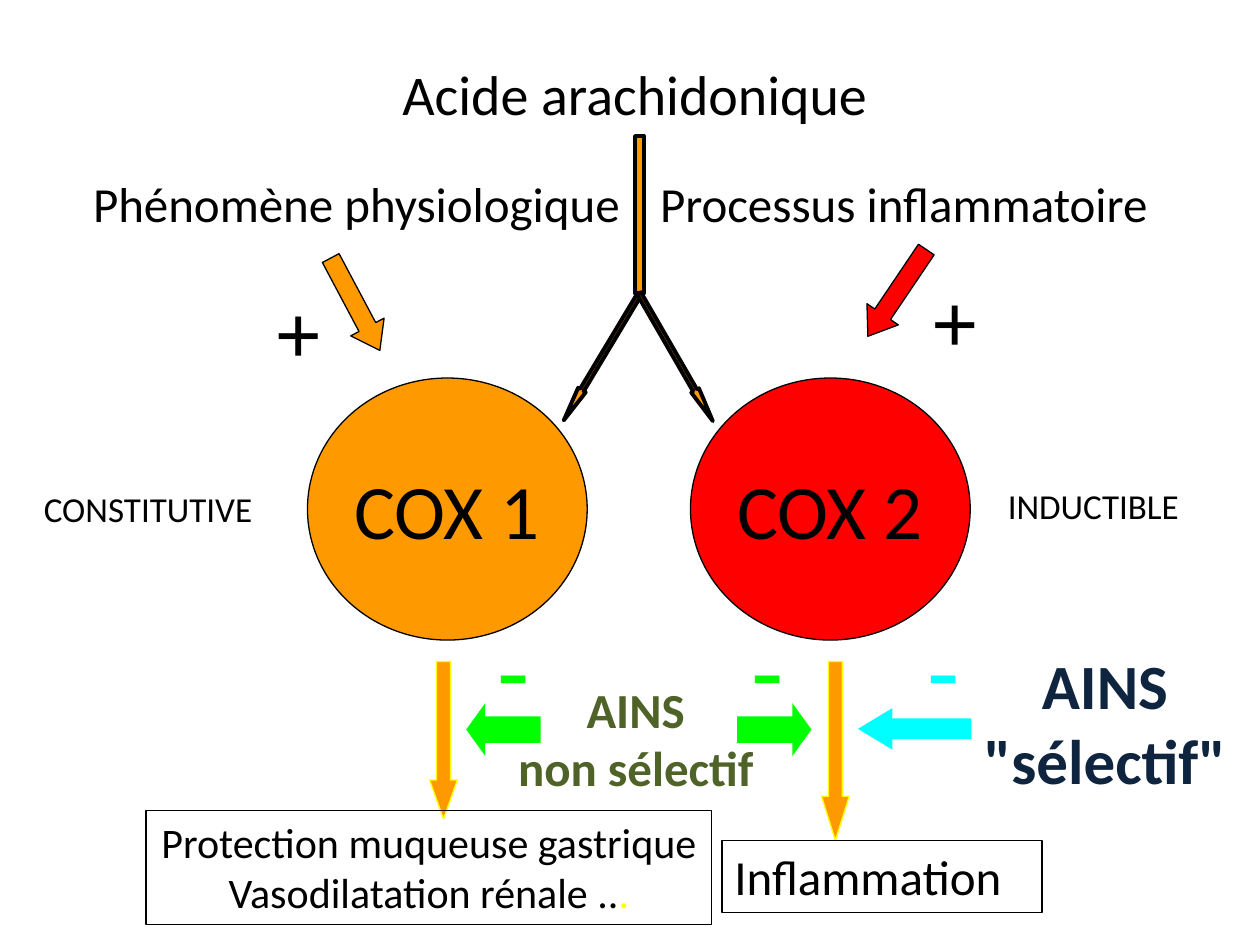
"""Draw the arachidonic acid pathway through COX 1 and COX 2."""
import pptx
import pptx.util
import pptx.dml.color
import pptx.enum.shapes
import pptx.enum.text

Pt = pptx.util.Pt
Kind = pptx.enum.shapes.MSO_SHAPE
Align = pptx.enum.text.PP_ALIGN
Fit = pptx.enum.text.MSO_AUTO_SIZE
Anchor = pptx.enum.text.MSO_ANCHOR

HUES = {
    "black": "000000", "orange": "FF9900", "red": "FF0000", "yellow": "FFFF00",
    "lime": "00FF00", "cyan": "00FFFF", "olive": "4F6228", "navy": "0F243E",
}
COLS, ROWS = 100, 75


class Board:
    """Hold the deck, its style and the current slide."""

    def __init__(self):
        self.deck = pptx.Presentation()
        self.deck.slide_width = pptx.util.Inches(10)
        self.deck.slide_height = pptx.util.Inches(7.5)
        self.slide = self.deck.slides.add_slide(self.deck.slide_layouts[6])
        self.font = {"name": "Calibri", "bold": False}
        self.frame = {"word_wrap": False, "auto_size": Fit.SHAPE_TO_FIT_TEXT,
                      "vertical_anchor": Anchor.TOP}

    def hue(self, name):
        return pptx.dml.color.RGBColor.from_string(HUES[name])

    def place(self, left, top, width, height):
        col, row = self.deck.slide_width / COLS, self.deck.slide_height / ROWS
        return [round(n) for n in (left * col, top * row, width * col, height * row)]

    def label(self, shape, lines, size, hue="black", align=Align.CENTER, font=None, **frame):
        body = shape.text_frame
        for key, val in {**self.frame, **frame}.items():
            setattr(body, key, val)
        for i, line in enumerate(lines):
            para = body.add_paragraph() if i else body.paragraphs[0]
            para.alignment = align
            for text, tint in [(line, hue)] if isinstance(line, str) else line:
                run = para.add_run()
                run.text = text
                for key, val in {**self.font, "size": Pt(size), **(font or {})}.items():
                    setattr(run.font, key, val)
                run.font.color.rgb = self.hue(tint)

    def text(self, box, lines, size, **style):
        self.label(self.slide.shapes.add_textbox(*self.place(*box)), lines, size, **style)

    def shape(self, kind, box, fill=None, line="black", width=0.75, turn=0, adj=()):
        shape = self.slide.shapes.add_shape(kind, *self.place(*box))
        shape.shadow.inherit = False
        shape.rotation = turn
        for i, val in enumerate(adj):
            shape.adjustments[i] = val
        for part, tint in ((shape.fill, fill), (shape.line.fill, line)):
            if tint:
                part.solid()
                part.fore_color.rgb = self.hue(tint)
            else:
                part.background()
        if line:
            shape.line.width = Pt(width)
        return shape


def main():
    board = Board()
    left = {"align": Align.LEFT}
    bold = {"font": {"bold": True}}
    plus = {"font": {"name": "Times New Roman", "bold": True}, **left}

    board.text((6.4, 13.3, 91.6, 5.7),
               ["Phénomène physiologique\tProcessus inflammatoire"], 28, **left)
    board.text((20, 4.2, 60.8, 6.4), ["Acide arachidonique"], 32, word_wrap=True)

    board.shape(Kind.RECTANGLE, (50.4, 10.8, 0.7, 12.5), "orange", width=2.25)
    for x, turn in ((47.4, 31), (53.3, 330)):
        board.shape(Kind.DOWN_ARROW, (x, 22.5, 0.7, 11.7), "orange",
                    width=2.25, turn=turn, adj=(0.5, 4))

    for x, name, fill in ((24.4, "COX 1", "orange"), (54.8, "COX 2", "red")):
        disc = board.shape(Kind.OVAL, (x, 30, 22.2, 20.8), fill)
        board.label(disc, [name], 44, auto_size=Fit.NONE, vertical_anchor=Anchor.MIDDLE)
    for box, name in (((2.5, 38.2, 18.7, 4.4), "CONSTITUTIVE"),
                      ((79, 38, 15.7, 4.4), "INDUCTIBLE")):
        board.text(box, [name], 20, **left)

    for x, high in ((34.1, 12.5), (65.2, 14.2)):
        board.shape(Kind.DOWN_ARROW, (x, 52.5, 2.2, high), "orange", "yellow",
                    adj=(0.5, high / 8.9))
    shield = board.shape(Kind.RECTANGLE, (11.6, 64.3, 44.9, 9.1))
    board.label(shield, ["Protection muqueuse gastrique",
                         [("Vasodilatation rénale ..", "black"), (".", "yellow")]], 24)
    flame = board.shape(Kind.RECTANGLE, (57.3, 66.7, 25.4, 5.7))
    board.label(flame, ["Inflammation"], 28, word_wrap=True, **left)

    for x, y, fill, turn in ((69.7, 19.1, "red", 34), (26.7, 20, "orange", 332)):
        board.shape(Kind.DOWN_ARROW, (x, y, 3, 8.3), fill, turn=turn, adj=(0.5, 0.7))
    for x, y in ((20.8, 21.8), (72.9, 20.9)):
        board.text((x, y, 5.8, 9), ["+"], 48, **plus)

    board.text((40, 53.4, 20.9, 10.5), ["AINS", "non sélectif"], 28, hue="olive", **bold)
    board.text((76.6, 50.8, 22.2, 13), ["AINS", '"sélectif"'], 36, hue="navy", **bold)
    for kind, box, fill, head in (
            (Kind.RIGHT_ARROW, (58.5, 55.8, 5.9, 4.2), "lime", 0.36),
            (Kind.LEFT_ARROW, (37, 55.8, 5.9, 4.2), "lime", 0.36),
            (Kind.LEFT_ARROW, (68.1, 56.2, 9, 3.3), "cyan", 0.83)):
        board.shape(kind, box, fill, None, adj=(0.5, head))
    for x, hue in ((38.5, "lime"), (58.7, "lime"), (72.6, "cyan")):
        board.text((x, 47.5, 4.6, 11.1), ["-"], 60, hue=hue, **left)

    board.deck.save("out.pptx")


if __name__ == "__main__":
    main()
